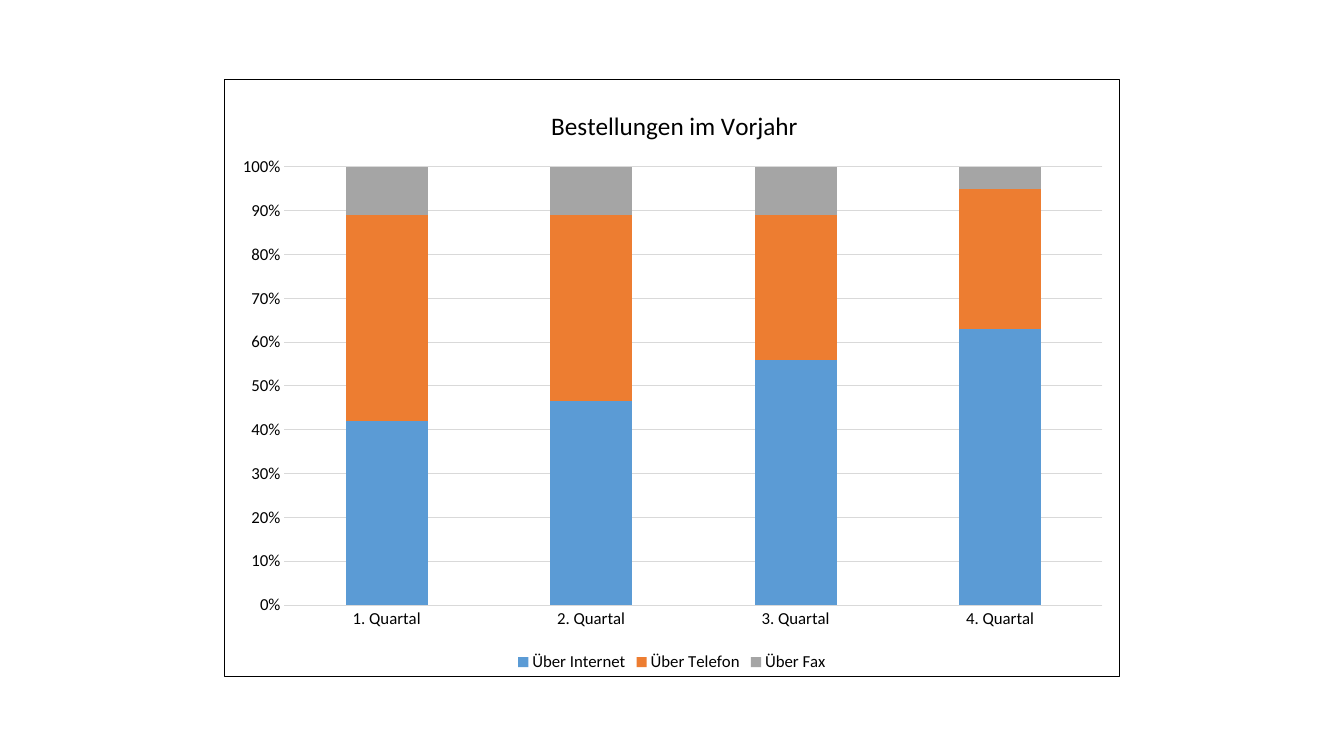
import pptx
import pptx.chart.data
import pptx.dml.color
import pptx.enum.chart
import pptx.oxml
import pptx.oxml.ns
import pptx.util

HUES = {
    "ink": "000000",
    "paper": "FFFFFF",
    "grid": "D9D9D9",
    "blue": "5B9BD5",
    "orange": "ED7D31",
    "gray": "A5A5A5",
}
TERMS = ["1. Quartal", "2. Quartal", "3. Quartal", "4. Quartal"]
ORDERS = [
    ("Über Internet", "blue", (42, 47, 56, 63)),
    ("Über Telefon", "orange", (47, 43, 33, 32)),
    ("Über Fax", "gray", (11, 11, 11, 5)),
]


class Deck:
    """Hold the style and the current slide, and draw elements by shares of its size."""

    face = "Calibri"
    thin = pptx.util.Pt(0.75)

    def __init__(self, wide, high):
        self.show = pptx.Presentation()
        self.show.slide_width = pptx.util.Inches(wide)
        self.show.slide_height = pptx.util.Inches(high)
        self.slide = self.show.slides.add_slide(self.show.slide_layouts[6])

    def hue(self, name):
        return pptx.dml.color.RGBColor.from_string(HUES[name])

    def type(self, font, size):
        font.name = self.face
        font.size = pptx.util.Pt(size)
        font.bold = False
        font.color.rgb = self.hue("ink")

    def rule(self, line):
        line.color.rgb = self.hue("grid")
        line.width = self.thin

    def place(self, node, **parts):
        space = pptx.oxml.ns.nsdecls("c")
        body = "".join(f'<c:{key} val="{val}"/>' for key, val in parts.items())
        old = node.find(pptx.oxml.ns.qn("c:layout"))
        if old is not None:
            node.remove(old)
        layout = pptx.oxml.parse_xml(
            f"<c:layout {space}><c:manualLayout>{body}</c:manualLayout></c:layout>"
        )
        return layout

    def frame(self, chart):
        space = pptx.oxml.ns.nsdecls("c", "a")
        box = pptx.oxml.parse_xml(
            f'<c:spPr {space}><a:solidFill><a:srgbClr val="{HUES["paper"]}"/></a:solidFill>'
            f'<a:ln w="{self.thin}"><a:solidFill><a:srgbClr val="{HUES["ink"]}"/>'
            "</a:solidFill></a:ln></c:spPr>"
        )
        chart.element.find(pptx.oxml.ns.qn("c:chart")).addnext(box)

    def head(self, chart, text):
        title = chart.chart_title
        title.text_frame.text = text
        self.type(title.text_frame.paragraphs[0].font, 18)
        node = title.element if hasattr(title, "element") else title._element
        layout = self.place(node, xMode="edge", yMode="edge", x=0.36, y=0.04)
        node.find(pptx.oxml.ns.qn("c:tx")).addnext(layout)
        title.include_in_layout = False

    def axes(self, chart):
        kinds = pptx.enum.chart.XL_TICK_MARK
        for axis in (chart.category_axis, chart.value_axis):
            axis.major_tick_mark = axis.minor_tick_mark = kinds.NONE
            self.type(axis.tick_labels.font, 12)
        self.rule(chart.category_axis.format.line)
        scale = chart.value_axis
        scale.format.line.fill.background()
        scale.minimum_scale, scale.maximum_scale, scale.major_unit = 0, 1, 0.1
        scale.tick_labels.number_format = "0%"
        scale.tick_labels.number_format_is_linked = False
        self.rule(scale.major_gridlines.format.line)

    def bars(self, left, top, wide, high, title, terms, rows):
        data = pptx.chart.data.CategoryChartData()
        data.categories = terms
        for name, _, vals in rows:
            data.add_series(name, vals)
        across, down = self.show.slide_width, self.show.slide_height
        chart = self.slide.shapes.add_chart(
            pptx.enum.chart.XL_CHART_TYPE.COLUMN_STACKED_100,
            int(left * across), int(top * down),
            int(wide * across), int(high * down), data,
        ).chart
        self.type(chart.font, 10)
        self.frame(chart)
        self.head(chart, title)
        self.axes(chart)
        plot = chart.plots[0]
        plot.gap_width, plot.overlap = 150, 100
        plot.vary_by_categories = False
        for series, (_, name, _) in zip(plot.series, rows):
            series.format.fill.solid()
            series.format.fill.fore_color.rgb = self.hue(name)
        chart.has_legend = True
        chart.legend.position = pptx.enum.chart.XL_LEGEND_POSITION.BOTTOM
        chart.legend.include_in_layout = False
        self.type(chart.legend.font, 12)
        area = chart.element.find(".//" + pptx.oxml.ns.qn("c:plotArea"))
        area.insert(0, self.place(
            area, layoutTarget="inner", xMode="edge", yMode="edge",
            x=0.067, y=0.146, w=0.914, h=0.735,
        ))


def main():
    deck = Deck(13.33, 7.5)
    deck.bars(1 / 6, 0.105, 2 / 3, 0.79, "Bestellungen im Vorjahr", TERMS, ORDERS)
    deck.show.save("out.pptx")


if __name__ == "__main__":
    main()
